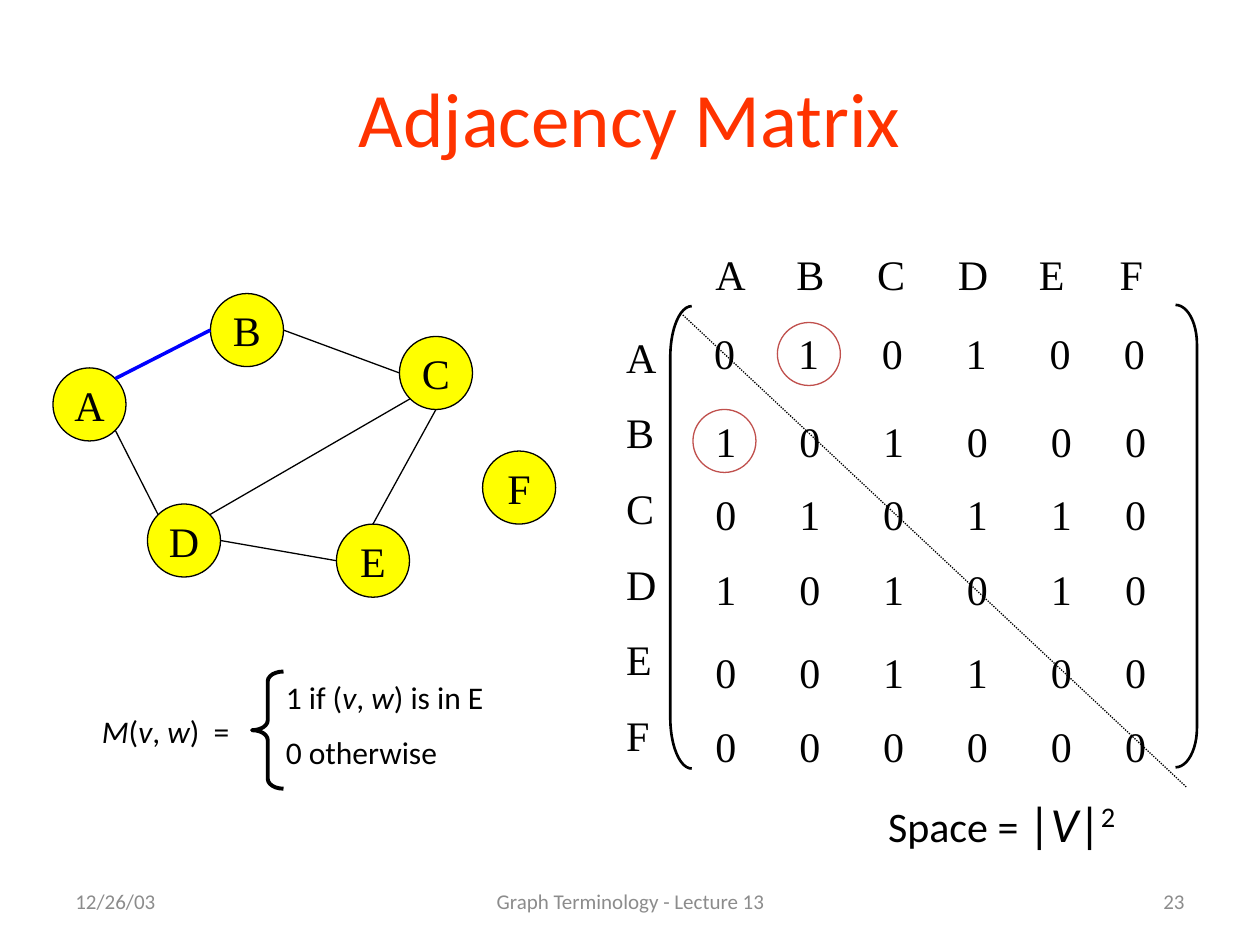
from math import sqrt
from lxml.etree import SubElement
from pptx import Presentation
from pptx.dml.color import RGBColor
from pptx.enum.dml import MSO_LINE
from pptx.enum.shapes import MSO_CONNECTOR, MSO_SHAPE
from pptx.enum.text import MSO_ANCHOR, PP_ALIGN
from pptx.oxml.ns import qn
from pptx.util import Cm, Pt

BLACK = RGBColor(0, 0, 0)
GRAY = RGBColor(0x8C, 0x8C, 0x8C)
RED = RGBColor(0xFF, 0x33, 0x00)
YELLOW = RGBColor(0xFF, 0xFF, 0x00)
BLUE = RGBColor(0, 0, 0xFF)
BRICK = RGBColor(0xC0, 0x50, 0x4D)
SANS, SERIF = "Calibri", "Times New Roman"

VERTICES = "ABCDEF"
MATRIX = [
    (5.57, 2.55, "010100"),
    (5.58, 3.25, "101000"),
    (5.58, 3.83, "010110"),
    (5.58, 4.42, "101010"),
    (5.58, 5.08, "001100"),
    (5.58, 5.67, "000000"),
]
HEADER_STOPS = [1.63 * step for step in range(1, 6)]
MATRIX_STOPS = [1.69 * step for step in range(1, 5)] + [8.26]

NODE_SIZE = 0.58
NODES = {
    "A": (0.42, 2.92), "B": (1.67, 2.33), "C": (3.17, 2.67),
    "E": (2.67, 4.16), "D": (1.17, 4.00), "F": (3.83, 3.58),
}
DIAGONAL = sqrt(0.5)
SITES = {
    "top": (0, -1), "bottom": (0, 1), "left": (-1, 0), "right": (1, 0),
    "top left": (-DIAGONAL, -DIAGONAL), "top right": (DIAGONAL, -DIAGONAL),
    "bottom left": (-DIAGONAL, DIAGONAL), "bottom right": (DIAGONAL, DIAGONAL),
}
EDGES = [
    ("C", "bottom", "E", "top", BLACK, 0.75),
    ("D", "right", "E", "left", BLACK, 0.75),
    ("A", "bottom right", "D", "top left", BLACK, 0.75),
    ("C", "bottom left", "D", "top right", BLACK, 0.75),
    ("B", "right", "C", "left", BLACK, 0.75),
    ("A", "top right", "B", "left", BLUE, 2),
]
HIGHLIGHTS = [(6.17, 2.56), (5.50, 3.25)]
BRACKETS = [
    (MSO_SHAPE.LEFT_BRACKET, (5.32, 2.43, 0.17, 3.67), (2.375,), 1.5),
    (MSO_SHAPE.RIGHT_BRACKET, (9.33, 2.42, 0.17, 3.67), (1.833,), 1.5),
    (MSO_SHAPE.LEFT_BRACE, (2.00, 5.33, 0.25, 0.93), (0.311, 0.501), 2.25),
]
FORMULAS = [
    ((0.71, 5.60, 1.44, 0.4), False, ["*M", "(", "*v", ", ", "*w", ")  ="]),
    ((2.17, 5.33, 2.17, 0.4), True, ["1 if (", "*v", ", ", "*w", ") is in E"]),
    ((2.17, 5.77, 2.00, 0.4), True, ["0 otherwise"]),
]
FOOTERS = [
    ((0.50, 6.95, 2.33, 0.4), "12/26/03", PP_ALIGN.LEFT),
    ((3.42, 6.95, 3.17, 0.4), "Graph Terminology - Lecture 13", PP_ALIGN.CENTER),
    ((7.17, 6.95, 2.33, 0.4), "23", PP_ALIGN.RIGHT),
]


def inches(*values):
    return [Cm(value * 2.54) for value in values]


def add_span(para, text, size, font=SANS, color=BLACK):
    span = para.add_run()
    span.text = text.lstrip("*")
    span.font.size, span.font.name = Pt(size), font
    span.font.color.rgb = color
    if text.startswith("*"):
        span.font.italic = True
    return span


def add_box(page, place, wrap=True):
    box = page.shapes.add_textbox(*inches(*place))
    box.text_frame.word_wrap = wrap
    return box.text_frame


def add_row(page, place, symbols, stops):
    para = add_box(page, place).paragraphs[0]
    tabs = SubElement(para._p.get_or_add_pPr(), qn("a:tabLst"))
    for stop in stops:
        SubElement(tabs, qn("a:tab"), pos=str(Cm(stop)), algn="l")
    add_span(para, "\t".join(symbols), 24, SERIF)


def add_outline(page, kind, place, color, width, fill=None):
    shape = page.shapes.add_shape(kind, *inches(*place))
    shape.shadow.inherit = False
    if fill is None:
        shape.fill.background()
    else:
        shape.fill.solid()
        shape.fill.fore_color.rgb = fill
    shape.line.color.rgb, shape.line.width = color, Pt(width)
    return shape


def add_line(page, start, end, color, width):
    line = page.shapes.add_connector(MSO_CONNECTOR.STRAIGHT, *inches(*start, *end))
    line.line.color.rgb, line.line.width = color, Pt(width)
    SubElement(line._element.spPr, qn("a:effectLst"))
    return line


def site_point(name, site):
    radius = NODE_SIZE / 2
    return [corner + radius * (1 + way) for corner, way in zip(NODES[name], SITES[site])]


def add_title(page):
    title = page.shapes.title
    title.left, title.top, title.width, title.height = inches(0.5, 0.3, 9, 1.25)
    title.text_frame.vertical_anchor = MSO_ANCHOR.MIDDLE
    para = title.text_frame.paragraphs[0]
    para.alignment = PP_ALIGN.CENTER
    add_span(para, "Adjacency Matrix", 44, color=RED)


def add_matrix(page):
    add_row(page, (5.58, 1.92, 3.83, 0.5), VERTICES, HEADER_STOPS)
    for left, top, digits in MATRIX:
        add_row(page, (left, top, 3.93, 0.5), digits, MATRIX_STOPS)
    labels = add_box(page, (4.87, 2.58, 0.48, 3.6))
    for index, name in enumerate(VERTICES):
        para = labels.add_paragraph() if index else labels.paragraphs[0]
        if index:
            para.space_before = Pt(14.4)
        add_span(para, name, 24, SERIF)


def add_formulas(page):
    for place, wrap, parts in FORMULAS:
        para = add_box(page, place, wrap).paragraphs[0]
        for part in parts:
            add_span(para, part, 18)
    para = add_box(page, (6.95, 6.25, 2.13, 0.57), False).paragraphs[0]
    add_span(para, "Space = ", 24)
    for part in ("|", "*V", "|"):
        add_span(para, part, 28)
    add_span(para, "2", 28).font._element.set("baseline", "30000")


def add_graph(page):
    for name, corner in NODES.items():
        place = (*corner, NODE_SIZE, NODE_SIZE)
        node = add_outline(page, MSO_SHAPE.OVAL, place, BLACK, 0.75, YELLOW)
        node.text_frame.word_wrap = False
        node.text_frame.vertical_anchor = MSO_ANCHOR.MIDDLE
        para = node.text_frame.paragraphs[0]
        para.alignment = PP_ALIGN.CENTER
        add_span(para, name, 24, SERIF)
    for first, leave, second, arrive, color, width in EDGES:
        add_line(page, site_point(first, leave), site_point(second, arrive), color, width)


def main():
    deck = Presentation()
    deck.slide_width, deck.slide_height = Cm(25.4), Cm(19.05)
    page = deck.slides.add_slide(deck.slide_layouts[5])
    add_title(page)
    for place, text, alignment in FOOTERS:
        frame = add_box(page, place)
        frame.vertical_anchor = MSO_ANCHOR.MIDDLE
        frame.paragraphs[0].alignment = alignment
        add_span(frame.paragraphs[0], text, 12, color=GRAY)
    for kind, place, bends, width in BRACKETS:
        bracket = add_outline(page, kind, place, BLACK, width)
        for index, bend in enumerate(bends):
            bracket.adjustments[index] = bend
    add_matrix(page)
    add_formulas(page)
    add_graph(page)
    for corner in HIGHLIGHTS:
        add_outline(page, MSO_SHAPE.OVAL, (*corner, 0.5, 0.5), BRICK, 0.75)
    diagonal = add_line(page, (5.42, 2.5), (9.42, 6.25), BLACK, 0.75)
    diagonal.line.dash_style = MSO_LINE.ROUND_DOT
    deck.save("out.pptx")


if __name__ == "__main__":
    main()
